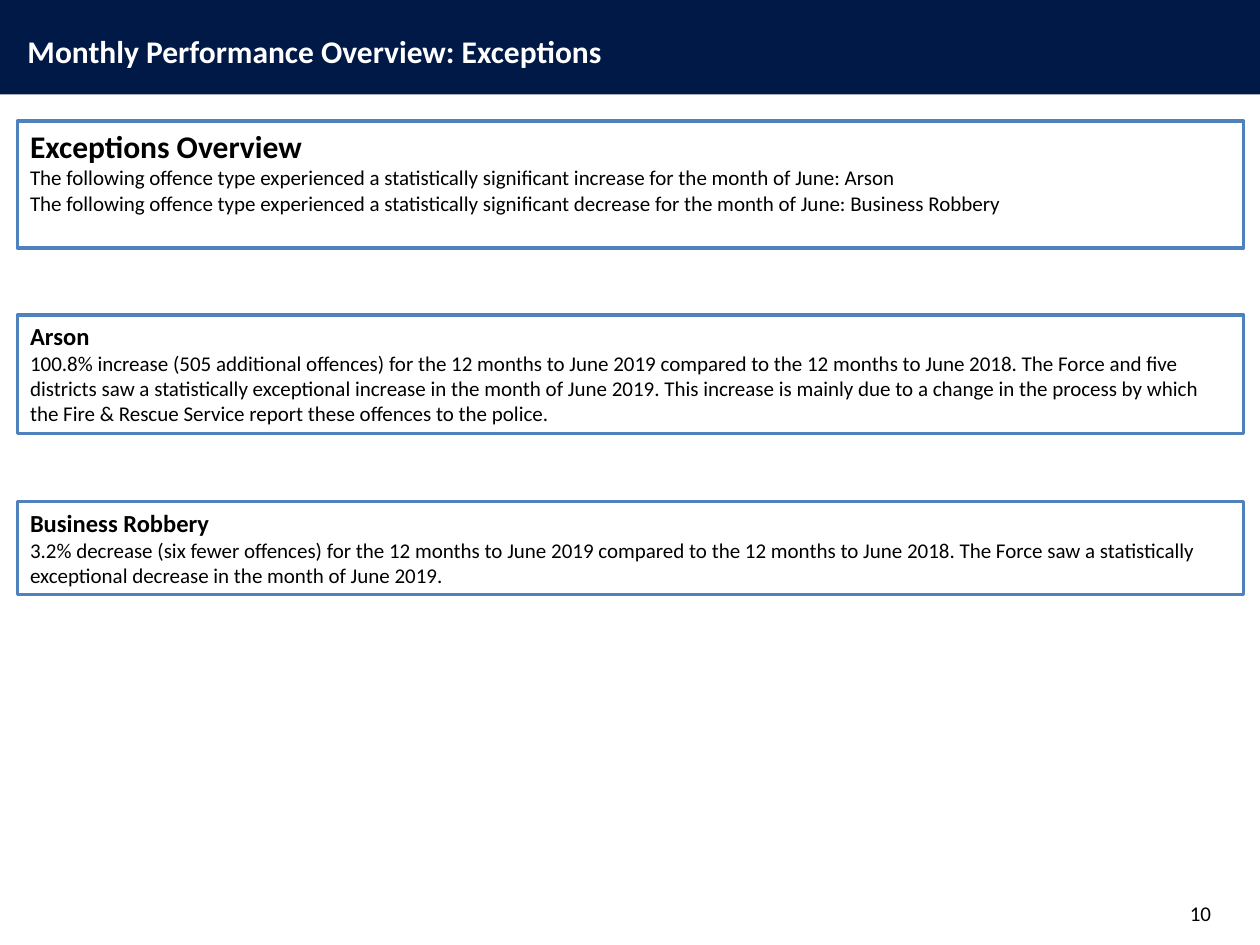
from dataclasses import dataclass

from pptx import Presentation
from pptx.dml.color import RGBColor
from pptx.enum.shapes import MSO_SHAPE
from pptx.enum.text import MSO_ANCHOR, PP_ALIGN
from pptx.util import Inches, Pt

WIDTH, HEIGHT = 10, 7.5


@dataclass(frozen=True)
class Theme:
    font: str = "Calibri"
    navy: RGBColor = RGBColor(0x00, 0x19, 0x47)
    blue: RGBColor = RGBColor(0x4F, 0x81, 0xBD)
    white: RGBColor = RGBColor(0xFF, 0xFF, 0xFF)
    black: RGBColor = RGBColor(0x00, 0x00, 0x00)
    title: int = 18
    heading: int = 14
    body: int = 12
    border: int = 2


THEME = Theme()

PANEL_LEFT, PANEL_WIDTH = 0.14 / WIDTH, 9.73 / WIDTH

# Top and height as shares of the slide, heading size, heading, body lines
PANELS = [
    (0.96 / HEIGHT, 1.01 / HEIGHT, THEME.title, "Exceptions Overview", [
        "The following offence type experienced a statistically significant "
        "increase for the month of June: Arson",
        "The following offence type experienced a statistically significant "
        "decrease for the month of June: Business Robbery",
    ]),
    (2.5 / HEIGHT, 0.94 / HEIGHT, THEME.heading, "Arson", [
        "100.8% increase (505 additional offences) for the 12 months to June "
        "2019 compared to the 12 months to June 2018. The Force and five "
        "districts saw a statistically exceptional increase in the month of "
        "June 2019. This increase is mainly due to a change in the process by "
        "which the Fire & Rescue Service report these offences to the police.",
    ]),
    (3.98 / HEIGHT, 0.74 / HEIGHT, THEME.heading, "Business Robbery", [
        "3.2% decrease (six fewer offences) for the 12 months to June 2019 "
        "compared to the 12 months to June 2018. The Force saw a "
        "statistically exceptional decrease in the month of June 2019.",
    ]),
]


def to_lengths(box):
    """Turn shares of the slide (left, top, width, height) into lengths."""
    return [Inches(share * side)
            for share, side in zip(box, (WIDTH, HEIGHT, WIDTH, HEIGHT))]


def add_rectangle(slide, box, fill, border=None):
    rectangle = slide.shapes.add_shape(MSO_SHAPE.RECTANGLE, *to_lengths(box))
    rectangle.shadow.inherit = False
    rectangle.fill.solid()
    rectangle.fill.fore_color.rgb = fill
    if border is None:
        rectangle.line.fill.background()
    else:
        rectangle.line.color.rgb = border
        rectangle.line.width = Pt(THEME.border)
    return rectangle


def write_paragraph(paragraph, text, size, color, bold=False,
                    align=PP_ALIGN.LEFT):
    paragraph.alignment = align
    run = paragraph.add_run()
    run.text = text
    run.font.name = THEME.font
    run.font.size = Pt(size)
    run.font.bold = bold
    run.font.color.rgb = color


def add_label(slide, box, text, size, color, anchor=MSO_ANCHOR.TOP, **style):
    frame = slide.shapes.add_textbox(*to_lengths(box)).text_frame
    frame.word_wrap = True
    frame.vertical_anchor = anchor
    write_paragraph(frame.paragraphs[0], text, size, color, **style)


def add_header(slide, box, title):
    left, top, width, height = box
    add_rectangle(slide, box, THEME.navy)
    title_box = (left + 0.012 * width, top + 0.27 * height,
                 0.787 * width, 0.53 * height)
    add_label(slide, title_box, title, THEME.title, THEME.white, bold=True)


def add_panel(slide, box, heading_size, heading, lines):
    frame = add_rectangle(slide, box, THEME.white, THEME.blue).text_frame
    frame.word_wrap = True
    frame.vertical_anchor = MSO_ANCHOR.TOP
    write_paragraph(frame.paragraphs[0], heading, heading_size, THEME.black,
                    bold=True)
    for line in lines:
        write_paragraph(frame.add_paragraph(), line, THEME.body, THEME.black)


def add_page_number(slide, box, number):
    add_label(slide, box, number, THEME.body, THEME.black,
              anchor=MSO_ANCHOR.MIDDLE, align=PP_ALIGN.RIGHT)


def main():
    deck = Presentation()
    deck.slide_width, deck.slide_height = Inches(WIDTH), Inches(HEIGHT)
    slide = deck.slides.add_slide(deck.slide_layouts[6])
    add_header(slide, (0, 0, 1, 0.1), "Monthly Performance Overview: Exceptions")
    add_page_number(slide, (0.738, 0.94, 0.233, 0.053), "10")
    for top, height, *content in PANELS:
        add_panel(slide, (PANEL_LEFT, top, PANEL_WIDTH, height), *content)
    deck.save("out.pptx")


if __name__ == "__main__":
    main()
